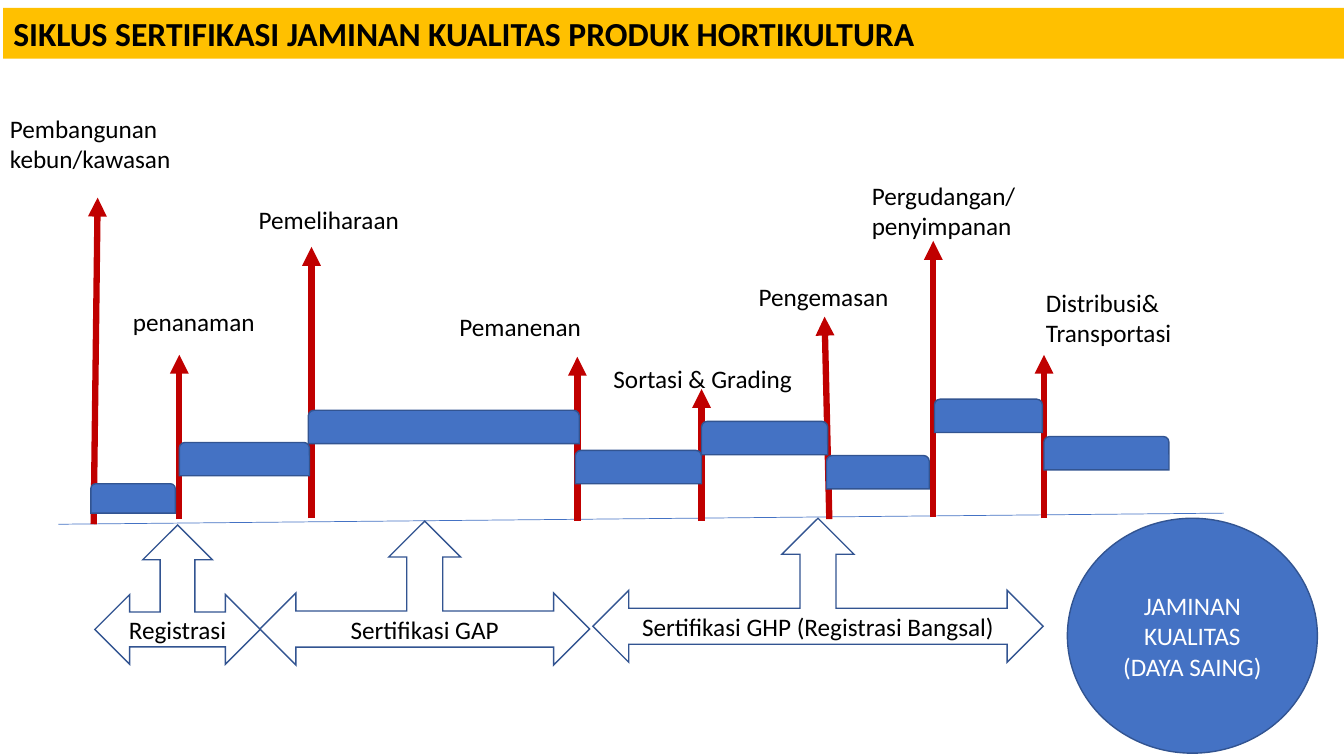
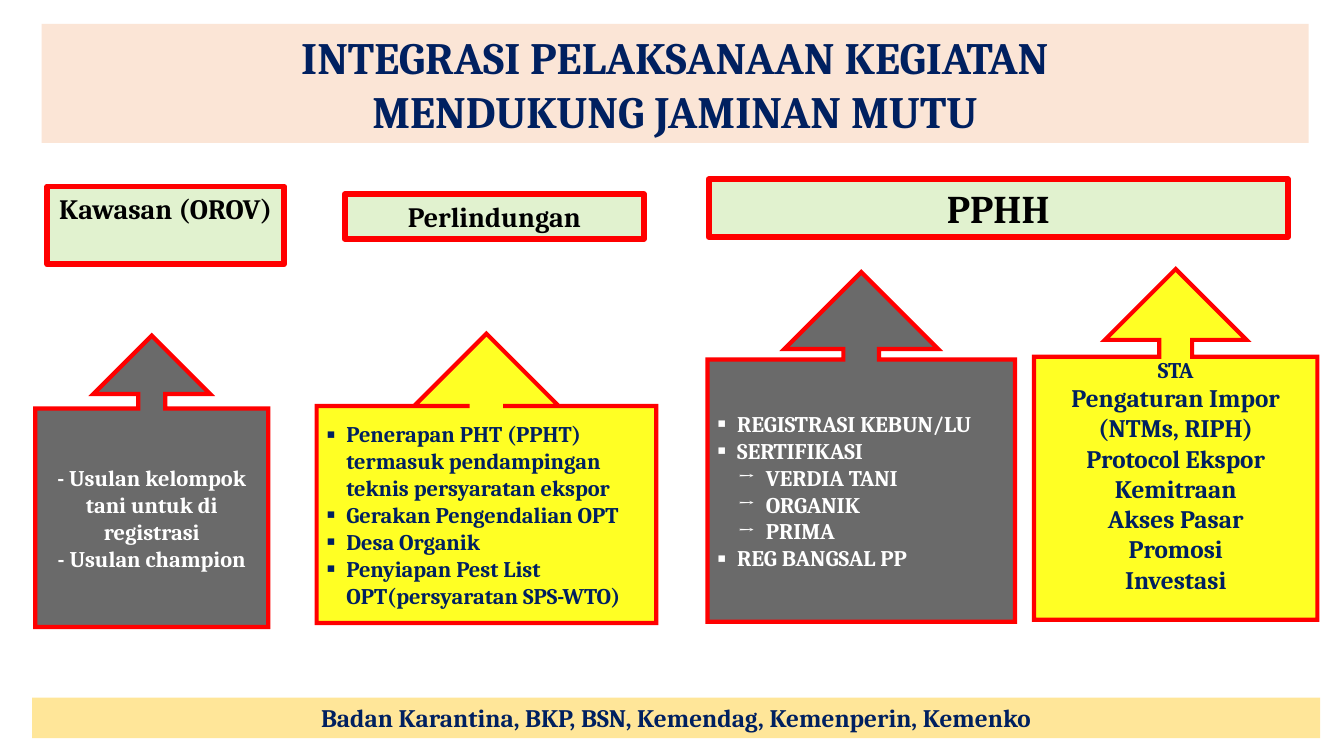
from lxml import etree
from pptx import Presentation
from pptx.dml.color import RGBColor
from pptx.enum.shapes import MSO_CONNECTOR, MSO_SHAPE
from pptx.enum.text import MSO_ANCHOR, MSO_AUTO_SIZE, PP_ALIGN
from pptx.oxml.ns import qn
from pptx.util import Cm, Pt

BLACK = RGBColor(0x00, 0x00, 0x00)
WHITE = RGBColor(0xFF, 0xFF, 0xFF)
BLUE = RGBColor(0x44, 0x72, 0xC4)
DARK_BLUE = RGBColor(0x32, 0x54, 0x91)
NAVY = RGBColor(0x00, 0x20, 0x60)
DARK_RED = RGBColor(0xC0, 0x00, 0x00)
RED = RGBColor(0xFF, 0x00, 0x00)
AMBER = RGBColor(0xFF, 0xC0, 0x00)
PEACH = RGBColor(0xFB, 0xE5, 0xD6)
SAND = RGBColor(0xFF, 0xE6, 0x99)
GREEN = RGBColor(0x92, 0xD0, 0x50)
GRAY = RGBColor(0x52, 0x52, 0x52)
YELLOW = RGBColor(0xFF, 0xFF, 0x00)

# bullet character: left margin and hanging indent in cm
BULLETS = {"▪": (0.5, 0.5), "→": (1.22, 0.71)}


def write_text(frame, text, font="Calibri", size=18, color=BLACK, bold=False,
               align=PP_ALIGN.CENTER, anchor=MSO_ANCHOR.MIDDLE, wrap=True):
    """Fill a text frame, one paragraph a line; a leading bullet sign makes a list item."""
    frame.auto_size = MSO_AUTO_SIZE.NONE
    frame.word_wrap = wrap
    frame.vertical_anchor = anchor
    for index, line in enumerate(text.split("\n")):
        paragraph = frame.paragraphs[0] if index == 0 else frame.add_paragraph()
        paragraph.alignment = align
        if line[0] in BULLETS:
            margin, hanging = BULLETS[line[0]]
            properties = paragraph._p.get_or_add_pPr()
            properties.set("marL", str(Cm(margin)))
            properties.set("indent", str(-Cm(hanging)))
            etree.SubElement(properties, qn("a:buFont"), typeface=font)
            etree.SubElement(properties, qn("a:buChar"), char=line[0])
            line = line[1:]
        run = paragraph.add_run()
        run.text = line
        run.font.name = font
        run.font.size = Pt(size)
        run.font.bold = bold
        run.font.color.rgb = color


def add_box(slide, kind, box, fill=None, opacity=100, line=None, line_width=1, join="miter"):
    shape = slide.shapes.add_shape(kind, *[Cm(length) for length in box])
    shape.shadow.inherit = False
    if fill is None:
        shape.fill.background()
    else:
        shape.fill.solid()
        shape.fill.fore_color.rgb = fill
        if opacity < 100:
            color = shape.fill._xPr.find(".//" + qn("a:srgbClr"))
            etree.SubElement(color, qn("a:alpha"), val=str(opacity * 1000))
    if line is None:
        shape.line.fill.background()
    else:
        shape.line.color.rgb = line
        shape.line.width = Pt(line_width)
        etree.SubElement(shape.line._get_or_add_ln(), qn("a:" + join))
    return shape


presentation = Presentation()
presentation.slide_width = Cm(33.87)
presentation.slide_height = Cm(19.05)

titles = [
    ("SIKLUS SERTIFIKASI JAMINAN KUALITAS PRODUK HORTIKULTURA",
     (0.08, 0.2, 33.8, 1.28), AMBER,
     dict(size=24, align=PP_ALIGN.LEFT)),
    ("INTEGRASI PELAKSANAAN KEGIATAN\nMENDUKUNG JAMINAN MUTU",
     (1.05, 0.6, 31.93, 3), PEACH,
     dict(font="Cambria", size=32, color=NAVY)),
]
for text, box, fill, text_format in titles:
    slide = presentation.slides.add_slide(presentation.slide_layouts[5])
    title = slide.shapes.title
    title.left, title.top, title.width, title.height = [Cm(length) for length in box]
    title.fill.solid()
    title.fill.fore_color.rgb = fill
    write_text(title.text_frame, text, bold=True, **text_format)
cycle_slide, integration_slide = presentation.slides

# Slide 1: timeline of the certification cycle
# label, (left, top, width), (foot x, foot y, tip x, tip y)
milestones = [
    ("Pembangunan\nkebun/kawasan", (0, 2.72, 4.55), (2.36, 13.21, 2.46, 4.98)),
    ("penanaman", (3.1, 7.59, 3.63), (4.52, 13.08, 4.52, 8.94)),
    ("Pemeliharaan", (6.27, 5.03, 4.24), (7.85, 13.06, 7.85, 6.22)),
    ("Pemanenan", (11.33, 7.72, 3.61), (14.55, 13.13, 14.55, 8.99)),
    ("Sortasi & Grading", (15.21, 9.02, 5.05), (17.68, 13.13, 17.68, 9.8)),
    ("Pengemasan", (18.87, 6.96, 3.81), (20.9, 13.08, 20.78, 7.98)),
    ("Pergudangan/\npenyimpanan", (21.72, 4.42, 4.17), (23.52, 13.03, 23.52, 6.07)),
    ("Distribusi&\nTransportasi", (26.11, 7.11, 3.71), (26.31, 13.06, 26.31, 8.94)),
]
axis = (1.47, 13.21, 30.84, 12.93)
for ends in [axis] + [arrow for _, _, arrow in milestones]:
    connector = cycle_slide.shapes.add_connector(
        MSO_CONNECTOR.STRAIGHT, *[Cm(length) for length in ends])
    connector.line.color.rgb = BLUE if ends is axis else DARK_RED
    connector.line.width = Pt(0.5 if ends is axis else 4.5)
    if ends is not axis:
        etree.SubElement(connector.line._get_or_add_ln(), qn("a:tailEnd"), type="triangle")
    etree.SubElement(connector._element.spPr, qn("a:effectLst"))

for text, (left, top, width), _ in milestones:
    height = 1.8 if "\n" in text else 1.02
    label = cycle_slide.shapes.add_textbox(Cm(left), Cm(top), Cm(width), Cm(height))
    write_text(label.text_frame, text, align=PP_ALIGN.LEFT, anchor=MSO_ANCHOR.TOP, wrap=False)

certifications = [
    ("Sertifikasi GAP", (6.55, 13.13, 8.31, 3.63)),
    ("Sertifikasi GHP (Registrasi Bangsal)", (14.94, 13.06, 11.35, 3.63)),
    ("Registrasi", (2.39, 13.23, 4.17, 3.51)),
]
for text, box in certifications:
    arrow = add_box(cycle_slide, MSO_SHAPE.LEFT_RIGHT_UP_ARROW, box, line=DARK_BLUE)
    write_text(arrow.text_frame, text)

stage_bars = [
    (2.29, 12.19, 2.13, 0.74), (4.52, 11.15, 3.28, 0.84), (7.77, 10.34, 6.83, 0.84),
    (14.5, 11.35, 3.18, 0.84), (17.68, 10.62, 3.18, 0.84), (20.83, 11.48, 2.59, 0.84),
    (23.55, 10.06, 2.72, 0.84), (26.31, 11, 3.15, 0.84),
]
for box in stage_bars:
    add_box(cycle_slide, MSO_SHAPE.ROUND_2_SAME_RECTANGLE, box, fill=BLUE, line=DARK_BLUE)

goal = add_box(cycle_slide, MSO_SHAPE.OVAL, (26.9, 13.06, 6.3, 5.92), fill=BLUE, line=DARK_BLUE)
write_text(goal.text_frame, "JAMINAN KUALITAS (DAYA SAING)", color=WHITE)

# Slide 2: units and their activities
units = [
    ("Kawasan (OROV)", (1.19, 4.7, 5.97, 1.96), 20, MSO_ANCHOR.TOP),
    ("Perlindungan", (8.69, 4.9, 7.54, 1.12), 20, MSO_ANCHOR.MIDDLE),
    ("PPHH", (17.86, 4.52, 14.6, 1.45), 28, MSO_ANCHOR.MIDDLE),
]
for text, box, size, anchor in units:
    header = add_box(integration_slide, MSO_SHAPE.RECTANGLE, box, fill=GREEN, opacity=27,
                     line=RED, line_width=4.25, join="round")
    write_text(header.text_frame, text, font="Cambria", size=size, bold=True, anchor=anchor)

activities = [
    ("- Usulan kelompok tani untuk di registrasi\n- Usulan champion",
     (0.89, 8.46, 5.87, 7.34), GRAY, WHITE, 16, PP_ALIGN.CENTER),
    ("▪Penerapan PHT (PPHT) termasuk pendampingan teknis persyaratan ekspor\n"
     "▪Gerakan Pengendalian OPT\n▪Desa Organik\n"
     "▪Penyiapan Pest List OPT(persyaratan SPS-WTO)",
     (7.98, 8.41, 8.56, 7.29), YELLOW, NAVY, 16, PP_ALIGN.LEFT),
    ("▪REGISTRASI KEBUN/LU\n▪SERTIFIKASI\n→VERDIA TANI\n→ORGANIK\n→PRIMA\n▪REG BANGSAL PP",
     (17.83, 6.86, 7.75, 8.81), GRAY, WHITE, 16, PP_ALIGN.LEFT),
    ("STA\nPengaturan Impor (NTMs, RIPH)\nProtocol Ekspor\nKemitraan\nAkses Pasar\n"
     "Promosi\nInvestasi",
     (26.06, 6.78, 7.14, 8.84), YELLOW, NAVY, 18, PP_ALIGN.CENTER),
]
for text, box, fill, color, size, align in activities:
    callout = add_box(integration_slide, MSO_SHAPE.UP_ARROW_CALLOUT, box, fill=fill,
                      opacity=86, line=RED, line_width=3)
    for index, adjustment in enumerate((0.116, 0.25, 0.25, 0.75)):
        callout.adjustments[index] = adjustment
    write_text(callout.text_frame, text, font="Cambria", size=size, color=color,
               bold=True, align=align)
# The last callout starts with a smaller line and sits high in its box
callout.text_frame.paragraphs[0].runs[0].font.size = Pt(16)
callout.text_frame.margin_bottom = Cm(0.8)

agencies = add_box(integration_slide, MSO_SHAPE.RECTANGLE, (0.81, 17.58, 32.46, 1.02), fill=SAND)
write_text(agencies.text_frame, "Badan Karantina, BKP, BSN, Kemendag, Kemenperin, Kemenko",
           font="Cambria", color=NAVY, bold=True)

presentation.save("out.pptx")
